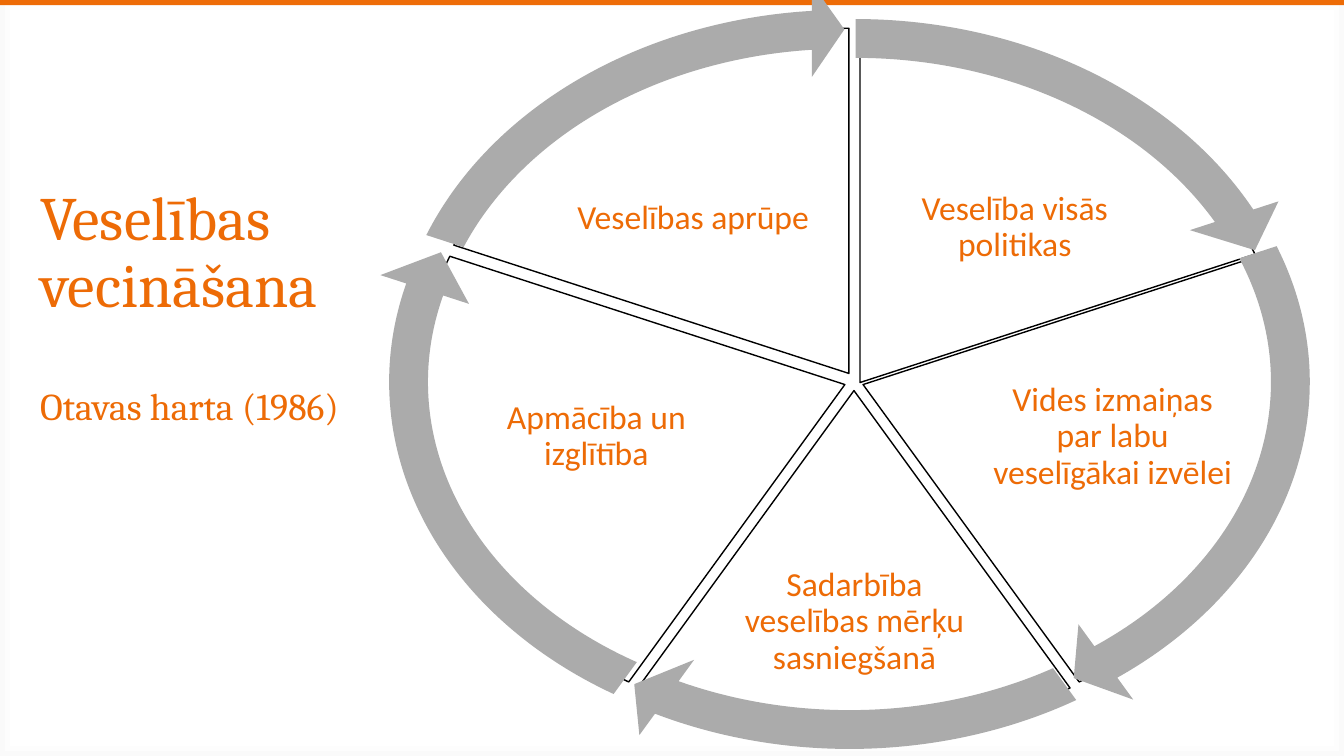
from pptx import Presentation
from pptx.dml.color import RGBColor
from pptx.enum.shapes import MSO_SHAPE
from pptx.enum.text import MSO_ANCHOR, PP_ALIGN
from pptx.oxml import parse_xml
from pptx.oxml.ns import nsdecls, qn
from pptx.util import Inches, Pt

ORANGE = "ED6B06"
GREY = "ABABAB"
SECTOR_COUNT = 5
FULL_TURN = 216
SECTOR_TURN = FULL_TURN / SECTOR_COUNT
TOP = 162
HEAD_TURN = 3.27
PIE_SIZE = (8.44, 6.85)
ARROW_SIZE = (9.49, 7.7)
ARROW_OFFSET = (-0.57, -0.45)

SECTORS = [
    ("Veselība visās politikas", (4.31, 0.37), (8.71, 1.52, 2.71, 1.47)),
    ("Vides izmaiņas par labu veselīgākai izvēlei", (4.34, 0.39), (9.78, 3.52, 2.51, 1.63)),
    ("Sadarbība veselības mērķu sasniegšanā", (4.25, 0.45), (7.27, 5.27, 2.41, 1.8)),
    ("Apmācība un izglītība", (4.16, 0.39), (4.66, 3.52, 2.51, 1.63)),
    ("Veselības aprūpe", (4.2, 0.28), (5.52, 1.43, 2.71, 1.47)),
]


def color(value):
    return RGBColor.from_string(value)


def set_background(slide):
    slide.background.fill.gradient()
    gradient = slide.element.find(".//" + qn("a:gradFill"))
    stops = "".join(
        f'<a:gs pos="{position}"><a:srgbClr val="{value}"/></a:gs>'
        for position, value in ((0, "FFFFFF"), (96000, "FFFFFF"), (100000, "FAFAFA"))
    )
    gradient.getparent().replace(gradient, parse_xml(
        f'<a:gradFill {nsdecls("a")} rotWithShape="1"><a:gsLst>{stops}</a:gsLst>'
        '<a:path path="rect"><a:fillToRect l="50000" t="50000" r="50000" b="50000"/></a:path>'
        '</a:gradFill>'
    ))


def add_figure(slide, kind, box, fill, line=None, adjustments=()):
    shape = slide.shapes.add_shape(kind, *map(Inches, box))
    shape.shadow.inherit = False
    shape.fill.solid()
    shape.fill.fore_color.rgb = color(fill)
    if line:
        shape.line.color.rgb = color(line)
        shape.line.width = Pt(1)
    else:
        shape.line.fill.background()
    for index, value in enumerate(adjustments):
        shape.adjustments[index] = value


def add_text(slide, box, paragraphs, font, align, inset):
    frame = slide.shapes.add_textbox(*map(Inches, box)).text_frame
    frame.word_wrap = True
    frame.vertical_anchor = MSO_ANCHOR.MIDDLE
    frame.margin_left = frame.margin_right = Inches(inset)
    frame.margin_top = frame.margin_bottom = Inches(min(inset, 0.05))
    for index, (text, size, space_before) in enumerate(paragraphs):
        paragraph = frame.add_paragraph() if index else frame.paragraphs[0]
        paragraph.text = text
        paragraph.alignment = align
        paragraph.line_spacing = 0.9
        paragraph.space_before = Pt(space_before)
        paragraph.font.name = font
        paragraph.font.size = Pt(size)
        paragraph.font.color.rgb = color(ORANGE)


def add_sector(slide, index, label, corner, label_box):
    start = (TOP + index * SECTOR_TURN) % FULL_TURN
    end = (start + SECTOR_TURN) % FULL_TURN
    add_figure(slide, MSO_SHAPE.PIE, (*corner, *PIE_SIZE), "FFFFFF", "000000", (start, end))
    add_text(slide, label_box, [(label, 24, 0)], "Calibri", PP_ALIGN.CENTER, 0.03)


def add_arrow(slide, index, corner):
    start = (TOP + index * SECTOR_TURN) % FULL_TURN
    end = (start + SECTOR_TURN) % FULL_TURN
    left, top = (place + offset for place, offset in zip(corner, ARROW_OFFSET))
    add_figure(slide, MSO_SHAPE.CIRCULAR_ARROW, (left, top, *ARROW_SIZE), GREY,
               adjustments=(0.05, HEAD_TURN, end - HEAD_TURN, start, 0.06))


def main():
    presentation = Presentation()
    presentation.slide_width = Inches(13.33)
    presentation.slide_height = Inches(7.5)
    slide = presentation.slides.add_slide(presentation.slide_layouts[6])
    set_background(slide)
    add_figure(slide, MSO_SHAPE.RECTANGLE, (0, 0, 13.33, 0.05), ORANGE)
    add_text(slide, (0.3, 1.41, 3.49, 3.29),
             [("Veselības vecināšana", 44, 0), ("Otavas harta (1986)", 27, 48)],
             "Cambria", PP_ALIGN.LEFT, 0.1)
    for index, (label, corner, label_box) in enumerate(SECTORS):
        add_sector(slide, index, label, corner, label_box)
    for index, (label, corner, label_box) in enumerate(SECTORS):
        add_arrow(slide, index, corner)
    presentation.save("out.pptx")


if __name__ == "__main__":
    main()
